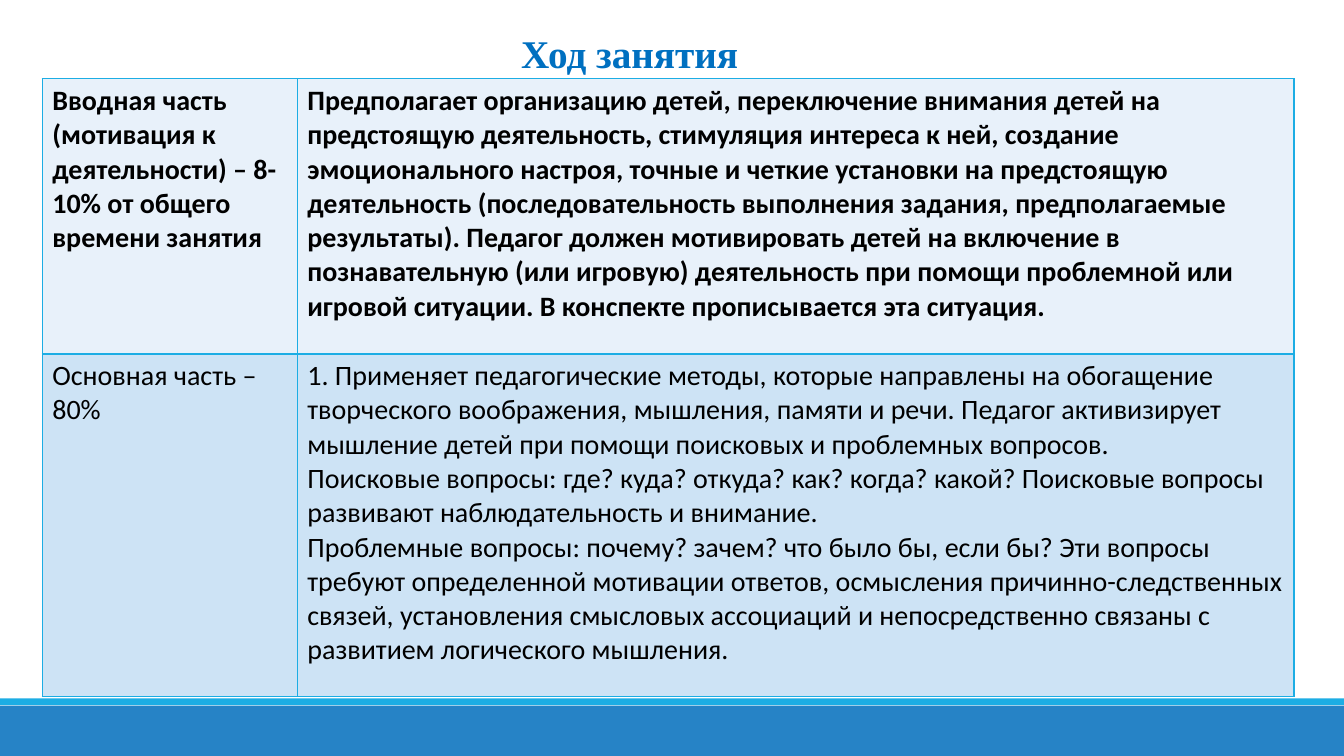
from lxml.etree import SubElement
from pptx import Presentation
from pptx.dml.color import RGBColor
from pptx.enum.shapes import MSO_SHAPE as Shape
from pptx.enum.text import MSO_AUTO_SIZE as AutoSize
from pptx.oxml.ns import qn
from pptx.util import Pt

BLUE = RGBColor(0x26, 0x83, 0xC6)
CYAN = RGBColor(0x1C, 0xAD, 0xE4)
TITLE_BLUE = RGBColor(0x00, 0x70, 0xC0)
BLACK = RGBColor(0x00, 0x00, 0x00)
PALE = RGBColor(0xE8, 0xF1, 0xFA)
LIGHT = RGBColor(0xCD, 0xE3, 0xF5)

WIDTH, HEIGHT = 960, 540
COLUMN_WIDTHS = (182.2, 712)
STAGES = [
    {
        "height": 196.6, "fill": PALE, "bold": True,
        "name": "Вводная часть (мотивация к деятельности) – 8-10% от общего времени занятия",
        "content": [
            "Предполагает организацию детей, переключение внимания детей на "
            "предстоящую деятельность, стимуляция интереса к ней, создание "
            "эмоционального настроя, точные и четкие установки на предстоящую "
            "деятельность (последовательность выполнения задания, предполагаемые "
            "результаты). Педагог должен мотивировать детей на включение в "
            "познавательную (или игровую) деятельность при помощи проблемной или "
            "игровой ситуации. В конспекте прописывается эта ситуация.",
        ],
    },
    {
        "height": 244.7, "fill": LIGHT, "bold": False,
        "name": "Основная часть – 80%",
        "content": [
            "1. Применяет педагогические методы, которые направлены на обогащение "
            "творческого воображения, мышления, памяти и речи. Педагог активизирует "
            "мышление детей при помощи поисковых и проблемных вопросов.",
            "Поисковые вопросы: где? куда? откуда? как? когда? какой? Поисковые "
            "вопросы развивают наблюдательность и внимание.",
            "Проблемные вопросы: почему? зачем? что было бы, если бы? Эти вопросы "
            "требуют определенной мотивации ответов, осмысления причинно-следственных "
            "связей, установления смысловых ассоциаций и непосредственно связаны с "
            "развитием логического мышления.",
        ],
    },
]


def write(frame, paragraphs, font="Calibri", size=20, color=BLACK, bold=False):
    """Fill a text frame with equally formatted paragraphs."""
    for index, text in enumerate(paragraphs):
        paragraph = frame.add_paragraph() if index else frame.paragraphs[0]
        run = paragraph.add_run()
        run.text = text
        run.font.name = font
        run.font.size = Pt(size)
        run.font.bold = bold
        run.font.color.rgb = color


def add_band(slide, top, height, color):
    """Draw a full-width footer band."""
    band = slide.shapes.add_shape(Shape.RECTANGLE, 0, Pt(top), Pt(WIDTH), Pt(height))
    band.shadow.inherit = False
    band.fill.solid()
    band.fill.fore_color.rgb = color
    band.line.fill.background()


def add_title(slide, text):
    """Place the indented slide title."""
    title = slide.shapes.add_textbox(Pt(308.2), Pt(13.7), Pt(237.6), Pt(42.5))
    frame = title.text_frame
    frame.word_wrap = False
    frame.auto_size = AutoSize.SHAPE_TO_FIT_TEXT
    write(frame, [text], font="Times New Roman", size=28, color=TITLE_BLUE, bold=True)
    paragraph = frame.paragraphs[0]
    paragraph.line_spacing = 1.12
    paragraph.space_after = Pt(0.1)
    properties = paragraph._p.get_or_add_pPr()
    properties.set("marL", str(Pt(57.6)))
    properties.set("indent", str(Pt(-0.7)))


def add_borders(cell, color):
    """Outline a cell on all four sides."""
    properties = cell._tc.get_or_add_tcPr()
    for index, side in enumerate(("lnL", "lnR", "lnT", "lnB")):
        line = properties.makeelement(qn(f"a:{side}"), {"w": str(Pt(1))})
        fill = SubElement(line, qn("a:solidFill"))
        SubElement(fill, qn("a:srgbClr"), val=str(color))
        properties.insert(index, line)


def add_stages(slide):
    """Build the table of lesson stages."""
    table_height = sum(stage["height"] for stage in STAGES)
    table = slide.shapes.add_table(
        len(STAGES), len(COLUMN_WIDTHS),
        Pt(30.2), Pt(56.2), Pt(sum(COLUMN_WIDTHS)), Pt(table_height),
    ).table
    for column, width in zip(table.columns, COLUMN_WIDTHS):
        column.width = Pt(width)
    for row, stage in zip(table.rows, STAGES):
        row.height = Pt(stage["height"])
        for cell, paragraphs in zip(row.cells, ([stage["name"]], stage["content"])):
            cell.fill.solid()
            cell.fill.fore_color.rgb = stage["fill"]
            add_borders(cell, CYAN)
            write(cell.text_frame, paragraphs, bold=stage["bold"])


def main():
    """Build and save the lesson slide."""
    deck = Presentation()
    deck.slide_width, deck.slide_height = Pt(WIDTH), Pt(HEIGHT)
    slide = deck.slides.add_slide(deck.slide_layouts[6])
    add_band(slide, 504, 36, BLUE)
    add_band(slide, 498.8, 5, CYAN)
    add_title(slide, "Ход занятия")
    add_stages(slide)
    deck.save("out.pptx")


if __name__ == "__main__":
    main()
